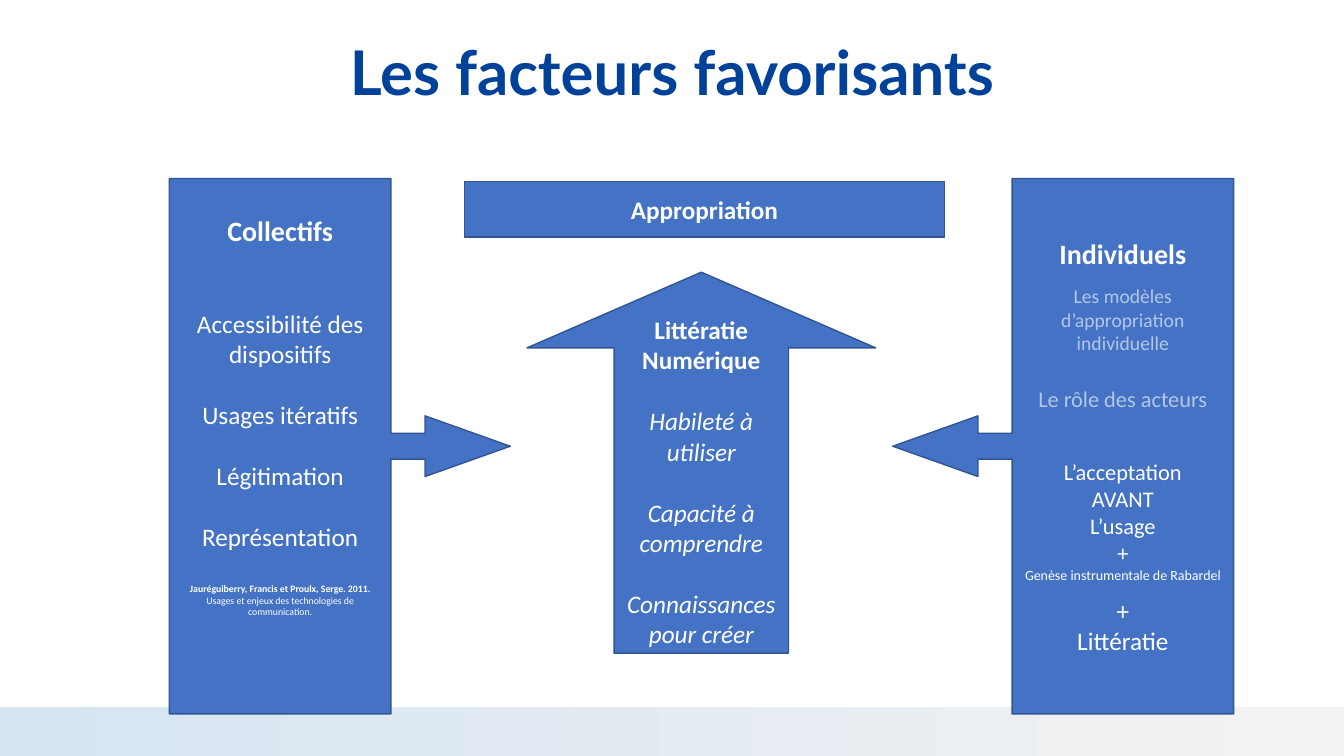
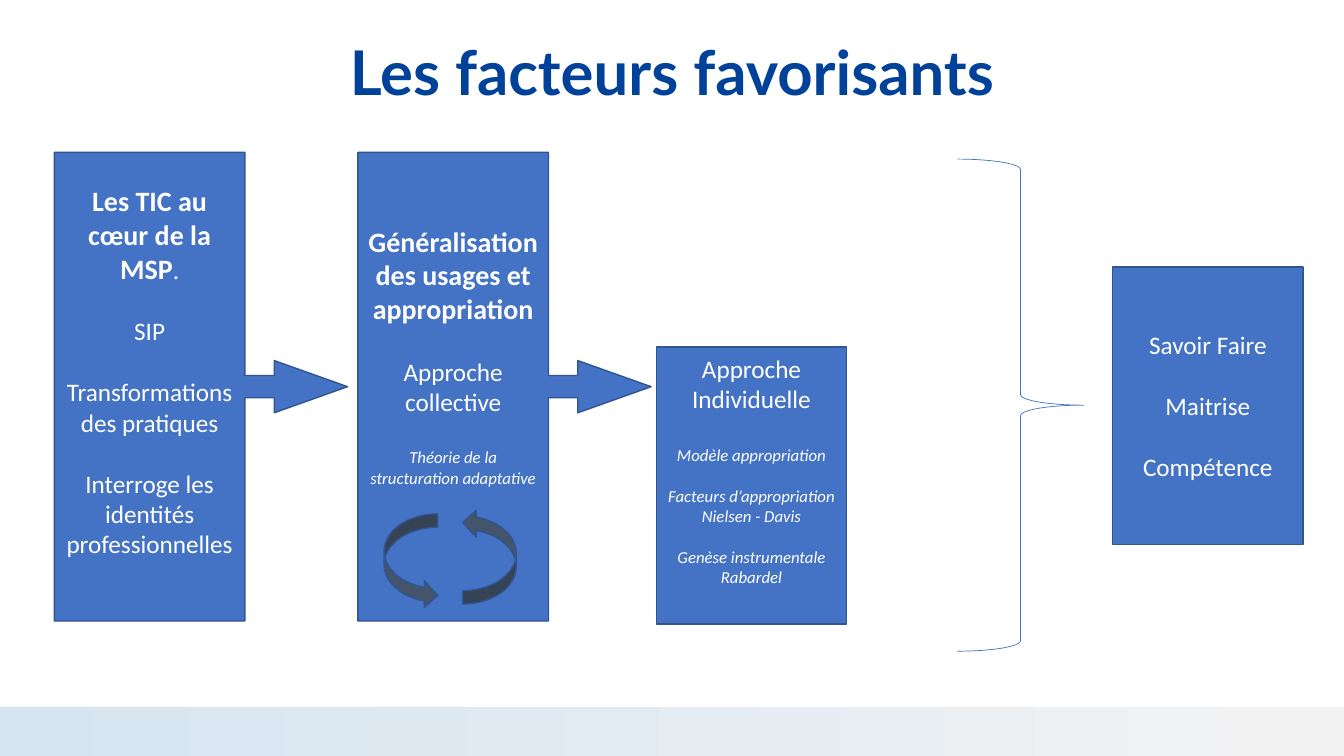
from pptx import Presentation
from pptx.dml.color import RGBColor
from pptx.enum.shapes import MSO_SHAPE as Shape
from pptx.enum.text import MSO_ANCHOR as Anchor, PP_ALIGN as Align
from pptx.util import Cm, Pt

# Shared look
WIDTH, HEIGHT = 33.87, 19.05
TITLE = "Les facteurs favorisants"
TITLE_BOX = (2.34, 1.07, 29.2, 1.9)
BAND_BOX = (0, 17.81, WIDTH, 1.24)
BAND_STOPS = ((0, "D6E5F2"), (0.98, "F2F2F2"))
NAVY, BLUE, EDGE, SLATE = "004199", "4472C4", "325491", "44546A"
WHITE, PALE = "FFFFFF", "B4C7E7"
LINE_HEIGHT = 1.22  # Calibri, relative to the type size
INSET = 3.6

# Text formats
TITLE_FORMAT = {"name": "Lato", "size": 44, "bold": True, "color": NAVY}
BASE = {"name": "Calibri", "size": 18, "color": WHITE}
PLAIN = {}
HEAD = {"size": 20, "bold": True}
STRONG = {"bold": True}
ITALIC = {"italic": True}
THEORY = {"size": 12, "italic": True}
MEDIUM = {"size": 16}
SMALL = {"size": 10}
CITE = {"size": 7}
CITE_STRONG = {"size": 7, "bold": True}
PALE_MODEL = {"size": 14, "color": PALE}
PALE_ROLE = {"size": 16, "color": PALE}

# Geometry shared by several parts
CALLOUT = (0.076, 0.089, 0.25, 0.65)
PILLAR = (8.59, 13.49)
STAGE = (7.39, 11.81)
CARD = (4.8, 6.99)
CYCLE = (1.35, 2.39)

# Content: each paragraph is (space before, in points of type; then its runs)
FACTORS = [
    {"shape": Shape.RECTANGLE, "at": (11.71, 4.57), "size": (12.09, 1.4),
     "text": [(0, ("Appropriation", STRONG))]},
    {"shape": Shape.UP_ARROW, "at": (13.28, 6.86), "size": (8.79, 9.6),
     "adjust": (0.5, 0.217),
     "text": [
         (0, ("Littératie Numérique", STRONG)),
         (18, ("Habileté à utiliser", ITALIC)),
         (18, ("Capacité à comprendre", ITALIC)),
         (18, ("Connaissances pour créer", ITALIC))]},
    {"shape": Shape.RIGHT_ARROW_CALLOUT, "at": (4.27, 4.5), "size": PILLAR,
     "adjust": CALLOUT, "below": 36,
     "text": [
         (0, ("Collectifs", HEAD)),
         (36, ("Accessibilité des dispositifs", PLAIN)),
         (18, ("Usages itératifs", PLAIN)),
         (18, ("Légitimation", PLAIN)),
         (18, ("Représentation", PLAIN)),
         (18, ("Jauréguiberry, Francis et Proulx, Serge. 2011.", CITE_STRONG),
          (" Usages et enjeux des technologies de communication.", CITE))]},
    {"shape": Shape.LEFT_ARROW_CALLOUT, "at": (22.5, 4.5), "size": PILLAR,
     "adjust": CALLOUT,
     "text": [
         (0, ("Individuels", HEAD)),
         (8, ("Les modèles d’appropriation individuelle", PALE_MODEL)),
         (18, ("Le rôle des acteurs", PALE_ROLE)),
         (27, ("L’acceptation", MEDIUM)),
         (0, ("AVANT", MEDIUM)),
         (0, ("L’usage", MEDIUM)),
         (0, ("+", MEDIUM)),
         (0, ("Genèse instrumentale de Rabardel", SMALL)),
         (7, ("+", PLAIN)),
         (0, ("Littératie", PLAIN))]},
]

STAGES = [
    {"shape": Shape.RIGHT_ARROW_CALLOUT, "at": (1.37, 3.84), "size": STAGE,
     "adjust": CALLOUT, "below": 18,
     "text": [
         (0, ("Les TIC au cœur de la MSP", HEAD), (".", PLAIN)),
         (18, ("SIP", PLAIN)),
         (18, ("Transformations des pratiques", PLAIN)),
         (18, ("Interroge les identités professionnelles", PLAIN))]},
    {"shape": Shape.RIGHT_ARROW_CALLOUT, "at": (9.02, 3.84), "size": STAGE,
     "adjust": CALLOUT, "below": 36,
     "text": [
         (0, ("Généralisation des usages et appropriation", HEAD)),
         (18, ("Approche collective", PLAIN)),
         (18, ("Théorie de la structuration adaptative", THEORY))]},
    {"shape": Shape.CURVED_RIGHT_ARROW, "at": (9.68, 12.95), "size": CYCLE,
     "fill": SLATE},
    {"shape": Shape.CURVED_RIGHT_ARROW, "at": (11.66, 12.83), "size": CYCLE,
     "fill": SLATE, "rotation": 180},
    {"shape": Shape.RECTANGLE, "at": (16.54, 8.74), "size": CARD, "below": 18,
     "text": [
         (0, ("Approche Individuelle", PLAIN)),
         (18, ("Modèle appropriation", THEORY)),
         (12, ("Facteurs d’appropriation Nielsen - Davis", THEORY)),
         (12, ("Genèse instrumentale", THEORY)),
         (0, ("Rabardel", THEORY))]},
    {"shape": Shape.RIGHT_BRACE, "at": (24.13, 4.01), "size": (3.18, 12.4),
     "fill": None, "line": (BLUE, 0.5)},
    {"shape": Shape.RECTANGLE, "at": (28.04, 6.73), "size": CARD,
     "text": [
         (0, ("Savoir Faire", PLAIN)),
         (18, ("Maitrise", PLAIN)),
         (18, ("Compétence", PLAIN))]},
]


def paint(color_format, value):
    color_format.rgb = RGBColor.from_string(value)


def add_run(paragraph, text, style):
    run = paragraph.add_run()
    run.text = text
    for key, value in style.items():
        if key == "color":
            paint(run.font.color, value)
        else:
            setattr(run.font, key, Pt(value) if key == "size" else value)


def write(frame, paragraphs, below):
    frame.word_wrap = True
    frame.vertical_anchor = Anchor.MIDDLE
    frame.margin_bottom = Pt(INSET + below * LINE_HEIGHT)
    for index, (gap, *runs) in enumerate(paragraphs):
        paragraph = frame.add_paragraph() if index else frame.paragraphs[0]
        paragraph.alignment = Align.CENTER
        if gap:
            paragraph.space_before = Pt(round(gap * LINE_HEIGHT))
        for text, style in runs:
            add_run(paragraph, text, BASE | style)


def add_part(slide, part):
    shape = slide.shapes.add_shape(
        part["shape"], *map(Cm, part["at"] + part["size"]))
    shape.shadow.inherit = False
    shape.rotation = part.get("rotation", 0)
    for index, value in enumerate(part.get("adjust", ())):
        shape.adjustments[index] = value
    fill = part.get("fill", BLUE)
    if fill:
        shape.fill.solid()
        paint(shape.fill.fore_color, fill)
    else:
        shape.fill.background()
    line_color, line_width = part.get("line", (EDGE, 1))
    paint(shape.line.color, line_color)
    shape.line.width = Pt(line_width)
    if "text" in part:
        write(shape.text_frame, part["text"], part.get("below", 0))


def add_frame(slide):
    # Title
    frame = slide.shapes.add_textbox(*map(Cm, TITLE_BOX)).text_frame
    frame.word_wrap = True
    frame.margin_top = frame.margin_bottom = 0
    heading = frame.paragraphs[0]
    heading.alignment = Align.CENTER
    heading.line_spacing = 0.9
    add_run(heading, TITLE, TITLE_FORMAT)
    # Footer band
    band = slide.shapes.add_shape(Shape.RECTANGLE, *map(Cm, BAND_BOX))
    band.shadow.inherit = False
    band.line.fill.background()
    band.fill.gradient()
    band.fill.gradient_angle = 0
    for stop, (position, color) in zip(band.fill.gradient_stops, BAND_STOPS):
        stop.position = position
        paint(stop.color, color)


def main():
    deck = Presentation()
    deck.slide_width, deck.slide_height = Cm(WIDTH), Cm(HEIGHT)
    for parts in (FACTORS, STAGES):
        slide = deck.slides.add_slide(deck.slide_layouts[6])
        add_frame(slide)
        for part in parts:
            add_part(slide, part)
    deck.save("out.pptx")


if __name__ == "__main__":
    main()
